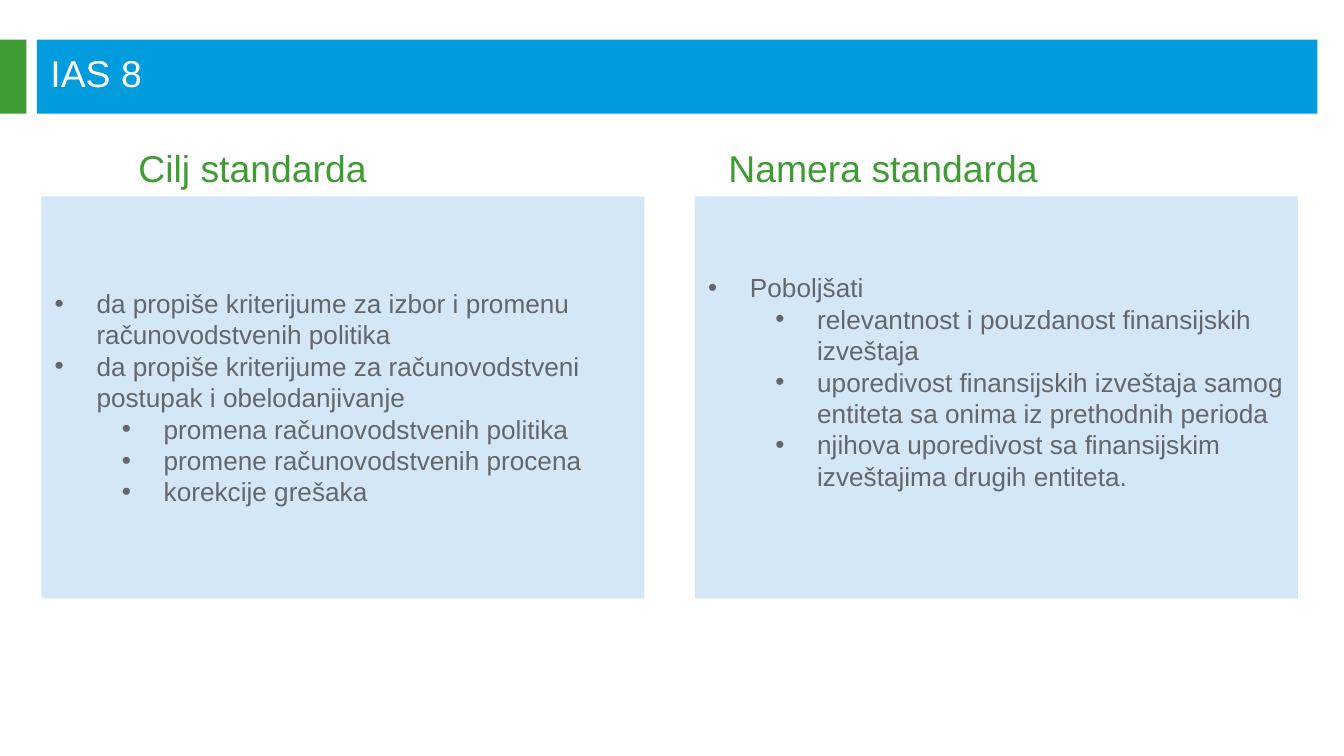
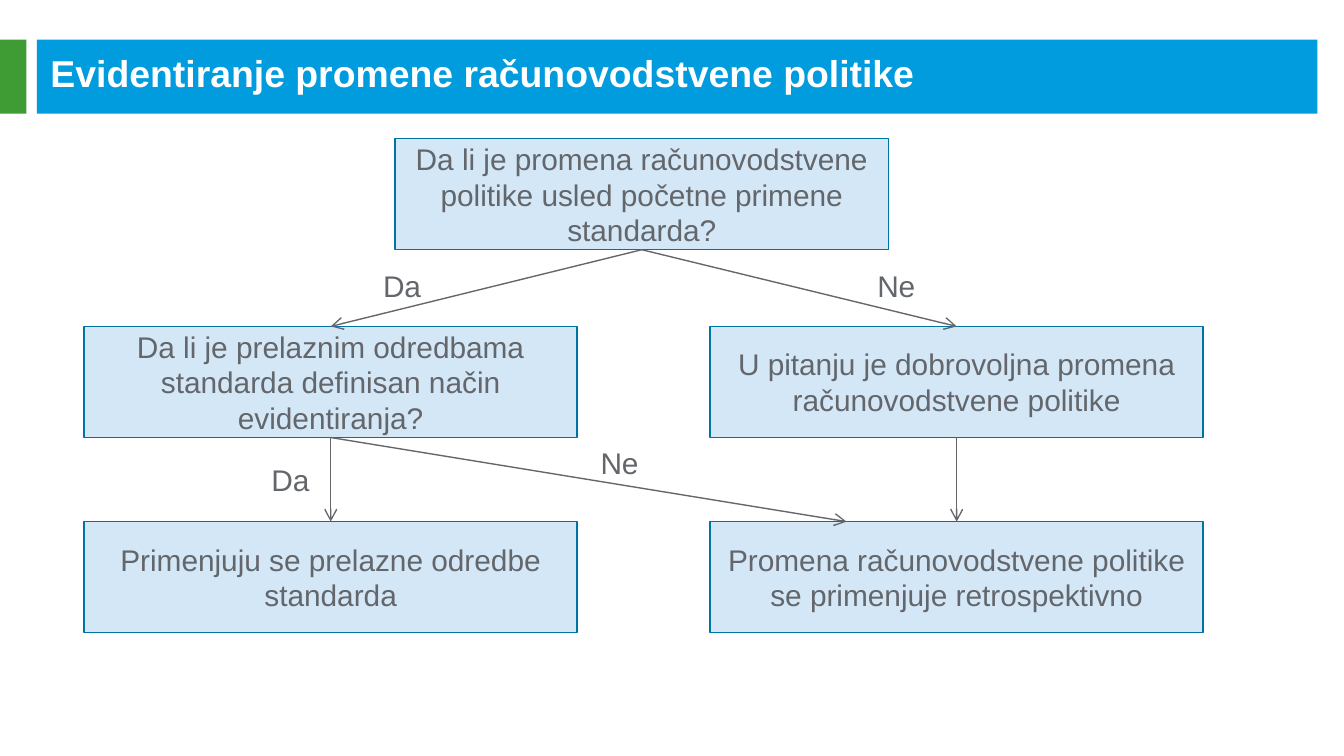
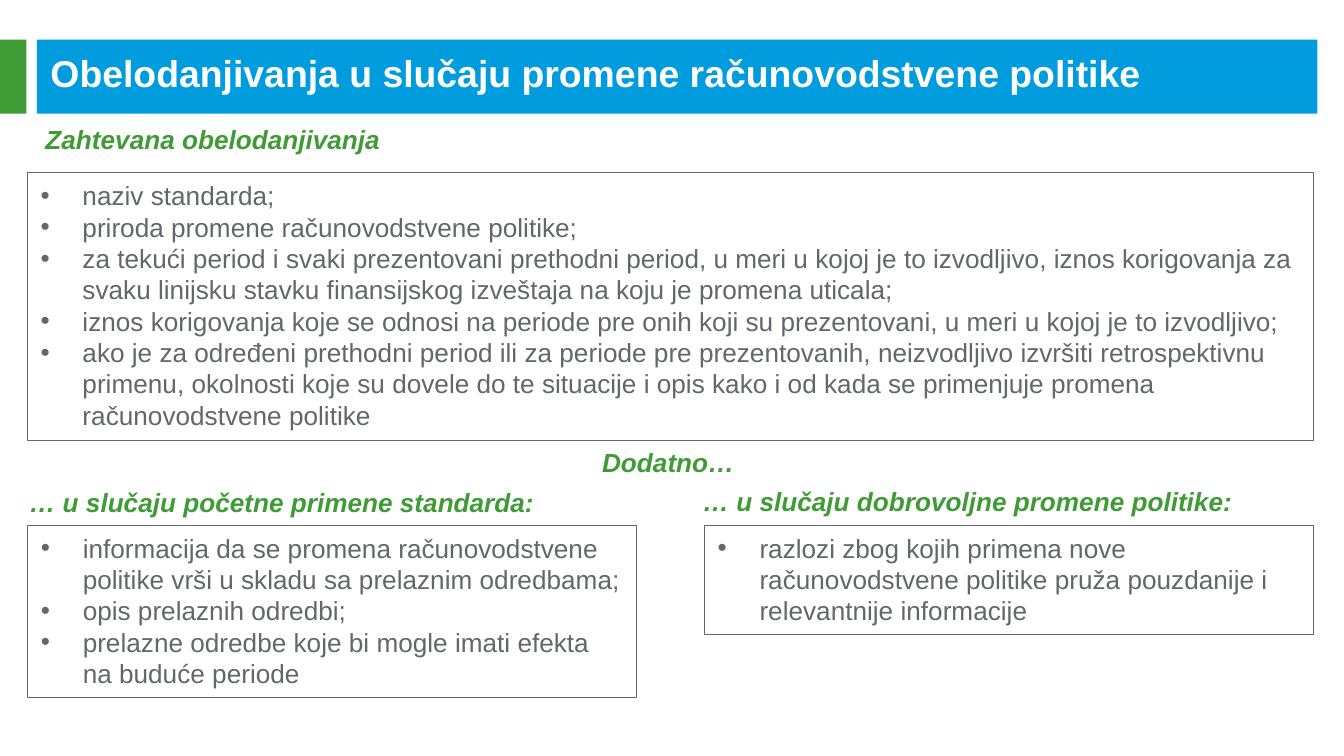
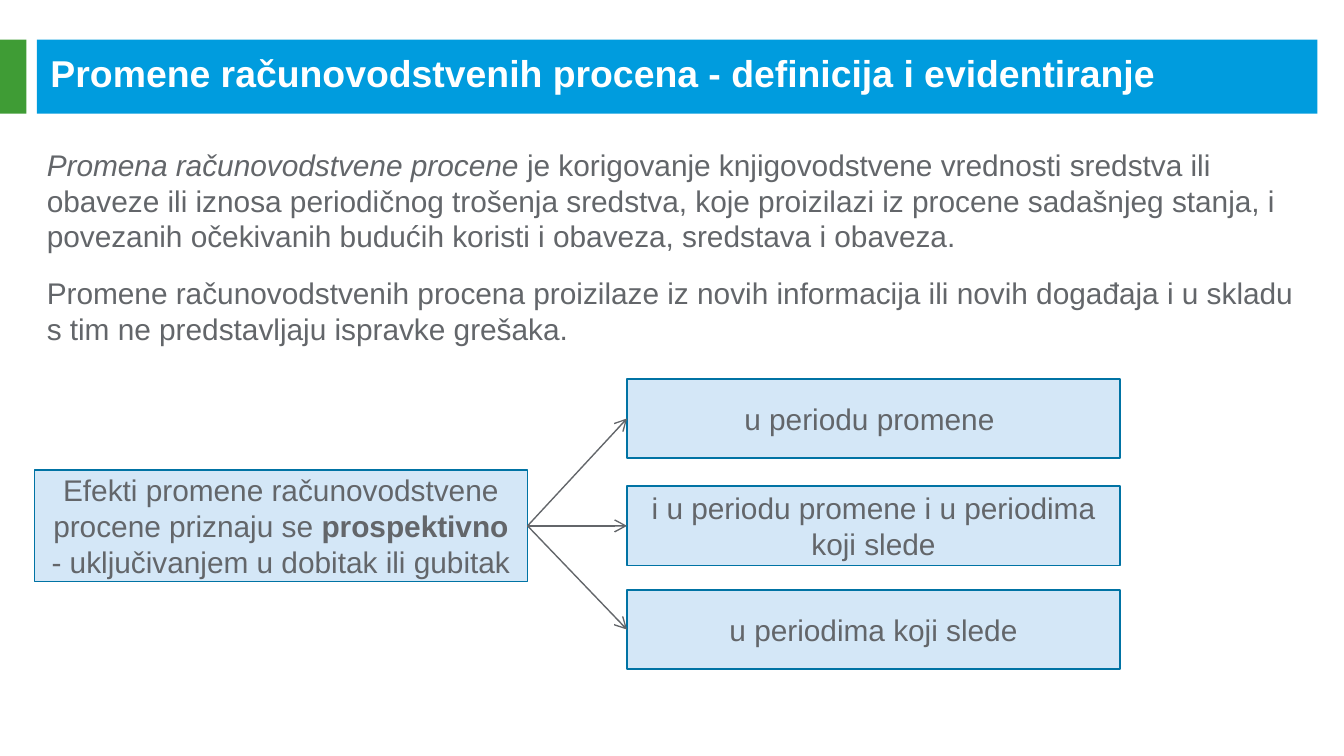
from dataclasses import dataclass

from lxml import etree
from pptx import Presentation
from pptx.dml.color import RGBColor
from pptx.enum.shapes import MSO_CONNECTOR, MSO_SHAPE
from pptx.enum.text import MSO_ANCHOR, MSO_AUTO_SIZE, PP_ALIGN
from pptx.oxml.ns import qn
from pptx.util import Cm, Pt


@dataclass(frozen=True)
class Theme:
    font: str = "Arial"
    blue: str = "009CDE"
    green: str = "3F9C35"
    pale: str = "D4E7F7"
    border: str = "0073A4"
    grey: str = "63666A"
    white: str = "FFFFFF"
    title_size: int = 20
    box_size: int = 16
    list_size: int = 14
    line_spacing: float = 1.0
    bullet_indent: float = 0.79
    level_step: float = 1.27


theme = Theme()
RECTANGLE = MSO_SHAPE.RECTANGLE


def set_text(shape, area, lines, size, color=theme.grey, fill=None, line=None,
             anchor=MSO_ANCHOR.TOP, align=PP_ALIGN.LEFT, bold=False, italic=False,
             emphasis="bold", gap=0, bullets=False, wrap=True):
    """Place a shape and write its lines; * encloses emphasis, a leading > is level two."""
    shape.left, shape.top, shape.width, shape.height = map(Cm, area)
    shape.shadow.inherit = False
    if fill:
        shape.fill.solid()
        shape.fill.fore_color.rgb = RGBColor.from_string(fill)
    else:
        shape.fill.background()
    if line:
        shape.line.color.rgb = RGBColor.from_string(line[0])
        shape.line.width = Pt(line[1])
    else:
        shape.line.fill.background()

    frame = shape.text_frame
    frame.auto_size = MSO_AUTO_SIZE.NONE
    frame.word_wrap = wrap
    frame.vertical_anchor = anchor
    for number, text in enumerate(lines):
        paragraph = frame.add_paragraph() if number else frame.paragraphs[0]
        properties = paragraph._p.get_or_add_pPr()
        level = 1 if text.startswith(">") else 0
        indent = theme.bullet_indent if bullets else 0
        paragraph.level = level
        properties.set("marL", str(Cm(indent + level * theme.level_step)))
        properties.set("indent", str(-Cm(indent)))
        if bullets:
            etree.SubElement(properties, qn("a:buFont")).set("typeface", theme.font)
            etree.SubElement(properties, qn("a:buChar")).set("char", "•")
        else:
            etree.SubElement(properties, qn("a:buNone"))
        paragraph.alignment = align
        paragraph.line_spacing = theme.line_spacing
        paragraph.space_before = Pt(gap if number else 0)
        font = paragraph.font
        font.name, font.size = theme.font, Pt(size)
        font.bold, font.italic = bold, italic
        font.color.rgb = RGBColor.from_string(color)
        for position, part in enumerate(text.lstrip(">").split("*")):
            if part:
                run = paragraph.add_run()
                run.text = part
                if position % 2:
                    setattr(run.font, emphasis, True)


def add_arrow(slide, source, source_site, target, target_site, shift=0):
    """Join two shapes; a shift moves the tip along the target's top edge."""
    connector = slide.shapes.add_connector(MSO_CONNECTOR.STRAIGHT, 0, 0, 0, 0)
    connector.begin_connect(source, source_site)
    if shift:
        connector.end_x = target.left + target.width // 2 + Cm(shift)
        connector.end_y = target.top
    else:
        connector.end_connect(target, target_site)
    connector.line.color.rgb = RGBColor.from_string(theme.grey)
    connector.line.width = Pt(0.75)
    etree.SubElement(connector.line._get_or_add_ln(), qn("a:tailEnd")).set("type", "arrow")
    etree.SubElement(connector.element.spPr, qn("a:effectLst"))


TOP, LEFT, BOTTOM, RIGHT = range(4)  # connection sites of a rectangle
heading_style = dict(size=theme.title_size, color=theme.green)
note_style = dict(size=theme.list_size, color=theme.green, bold=True, italic=True)
panel_style = dict(size=theme.list_size, fill=theme.pale, anchor=MSO_ANCHOR.MIDDLE, bullets=True)
outline_style = dict(size=theme.list_size, line=(theme.grey, 0.5), bullets=True)
box_style = dict(size=theme.box_size, fill=theme.pale, line=(theme.border, 0.85),
                 anchor=MSO_ANCHOR.MIDDLE, align=PP_ALIGN.CENTER)

presentation = Presentation()
presentation.slide_width, presentation.slide_height = Cm(25.4), Cm(14.29)

# Slides with their titles
TITLE_AND_CONTENT, COMPARISON, TITLE_ONLY = 1, 4, 5
slides = []
for layout, title, bold in [
    (COMPARISON, "IAS 8", False),
    (TITLE_ONLY, "Evidentiranje promene računovodstvene politike", True),
    (COMPARISON, "Obelodanjivanja u slučaju promene računovodstvene politike", True),
    (TITLE_AND_CONTENT, "Promene računovodstvenih procena - definicija i evidentiranje", True),
]:
    slide = presentation.slides.add_slide(presentation.slide_layouts[layout])
    set_text(slide.shapes.title, (0.7, 0.99, 24, 0.76), [title], theme.title_size,
             theme.white, anchor=MSO_ANCHOR.MIDDLE, bold=bold)
    slides.append(slide)
goal_slide, policy_slide, disclosure_slide, estimate_slide = slides

# Title bands, moved to the master so that all slides share them
master_tree = presentation.slide_master.shapes.element
for number, (left, width, color) in enumerate([(0.7, 24.2, theme.blue), (0, 0.5, theme.green)]):
    band = goal_slide.shapes.add_shape(RECTANGLE, 0, 0, 0, 0)
    set_text(band, (left, 0.75, width, 1.4), [], theme.title_size, fill=color)
    band.element.nvSpPr.cNvPr.id = 20 + number
    master_tree.append(band.element)

# Slide 1: goal and intention
goal_columns = [
    (1, 2.36, "Cilj standarda", 0.78, [
        "da propiše kriterijume za izbor i promenu računovodstvenih politika",
        "da propiše kriterijume za računovodstveni postupak i obelodanjivanje",
        ">promena računovodstvenih politika",
        ">promene računovodstvenih procena",
        ">korekcije grešaka",
    ]),
    (3, 13.51, "Namera standarda", 13.13, [
        "Poboljšati",
        ">relevantnost i pouzdanost finansijskih izveštaja",
        ">uporedivost finansijskih izveštaja samog entiteta sa onima iz prethodnih perioda",
        ">njihova uporedivost sa finansijskim izveštajima drugih entiteta.",
    ]),
]
for index, heading_left, heading, panel_left, items in goal_columns:
    set_text(goal_slide.placeholders[index], (heading_left, 2.62, 7.47, 1.35), [heading], **heading_style)
    panel = goal_slide.placeholders[index + 1]
    set_text(panel, (panel_left, 3.71, 11.4, 7.6), items, **panel_style)
panel.text_frame.margin_bottom = Cm(0.72)  # the right list sits a little higher

# Slide 2: decision tree
box_width, box_height = 9.32, 2.1
left_column, right_column = 1.59, 13.42
policy_boxes = []
for left, top, text in [
    (7.47, 2.62, "Da li je promena računovodstvene politike usled početne primene standarda?"),
    (left_column, 6.17, "Da li je prelaznim odredbama standarda definisan način evidentiranja?"),
    (right_column, 6.17, "U pitanju je dobrovoljna promena računovodstvene politike"),
    (left_column, 9.86, "Primenjuju se prelazne odredbe standarda"),
    (right_column, 9.86, "Promena računovodstvene politike se primenjuje retrospektivno"),
]:
    box = policy_slide.shapes.add_shape(RECTANGLE, 0, 0, 0, 0)
    set_text(box, (left, top, box_width, box_height), [text], **box_style)
    policy_boxes.append(box)
first_use, transition, voluntary, transitional_rules, retrospective = policy_boxes

for source, target, shift in [
    (first_use, transition, 0),
    (first_use, voluntary, 0),
    (transition, transitional_rules, 0),
    (transition, retrospective, -2.08),
    (voluntary, retrospective, 0),
]:
    add_arrow(policy_slide, source, BOTTOM, target, TOP, shift)

for left, top, answer in [(6.99, 4.93, "Da"), (4.88, 8.6, "Da"), (11.1, 8.28, "Ne"), (16.33, 4.93, "Ne")]:
    label = policy_slide.shapes.add_textbox(0, 0, 0, 0)
    set_text(label, (left, top, 1.24, 0.94), [answer], theme.box_size, wrap=False)

# Slide 3: required disclosures
for area, note in [
    ((0.61, 2.21, 24.21, 1.35), "Zahtevana obelodanjivanja"),
    ((11.13, 8.31, 3.07, 1.35), "Dodatno…"),
]:
    set_text(disclosure_slide.shapes.add_textbox(0, 0, 0, 0), area, [note], **note_style)

set_text(disclosure_slide.shapes.add_textbox(0, 0, 0, 0), (0.52, 3.27, 24.3, 5.05), [
    "naziv standarda;",
    "priroda promene računovodstvene politike;",
    "za tekući period i svaki prezentovani prethodni period, u meri u kojoj je to izvodljivo, "
    "iznos korigovanja za svaku linijsku stavku finansijskog izveštaja na koju je promena uticala;",
    "iznos korigovanja koje se odnosi na periode pre onih koji su prezentovani, "
    "u meri u kojoj je to izvodljivo;",
    "ako je za određeni prethodni period ili za periode pre prezentovanih, neizvodljivo izvršiti "
    "retrospektivnu primenu, okolnosti koje su dovele do te situacije i opis kako i od kada se "
    "primenjuje promena računovodstvene politike",
], **outline_style)

for index, note_left, note_top, note, list_left, list_height, items in [
    (1, 0.3, 9.07, "… u slučaju početne primene standarda:", 0.52, 3.25, [
        "informacija da se promena računovodstvene politike vrši u skladu sa prelaznim odredbama;",
        "opis prelaznih odredbi;",
        "prelazne odredbe koje bi mogle imati efekta na buduće periode",
    ]),
    (3, 13.03, 9.04, "… u slučaju dobrovoljne promene politike:", 13.31, 2.06, [
        "razlozi zbog kojih primena nove računovodstvene politike pruža pouzdanije i "
        "relevantnije informacije",
    ]),
]:
    placeholders = disclosure_slide.placeholders
    set_text(placeholders[index], (note_left, note_top, 11.2, 1.35), [note], **note_style)
    set_text(placeholders[index + 1], (list_left, 9.93, 11.51, list_height), items, **outline_style)

# Slide 4: definition and effects
set_text(estimate_slide.placeholders[1], (0.63, 2.64, 24.21, 3.61), [
    "*Promena računovodstvene procene *je korigovanje knjigovodstvene vrednosti sredstva ili "
    "obaveze ili iznosa periodičnog trošenja sredstva, koje proizilazi iz procene sadašnjeg "
    "stanja, i povezanih očekivanih budućih koristi i obaveza, sredstava i obaveza.",
    "Promene računovodstvenih procena proizilaze iz novih informacija ili novih događaja i "
    "u skladu s tim ne predstavljaju ispravke grešaka.",
], theme.box_size, emphasis="italic", gap=11)

effects = estimate_slide.shapes.add_shape(RECTANGLE, 0, 0, 0, 0)
set_text(effects, (0.65, 8.89, box_width, box_height), [
    "Efekti promene računovodstvene procene priznaju se *prospektivno *"
    "- uključivanjem u dobitak ili gubitak",
], **box_style)
for top, period in [
    (7.16, "u periodu promene "),
    (9.19, "i u periodu promene i u periodima koji slede"),
    (11.15, "u periodima koji slede"),
]:
    period_box = estimate_slide.shapes.add_shape(RECTANGLE, 0, 0, 0, 0)
    set_text(period_box, (11.85, top, box_width, 1.5), [period], **box_style)
    add_arrow(estimate_slide, effects, RIGHT, period_box, LEFT)

presentation.save("out.pptx")
